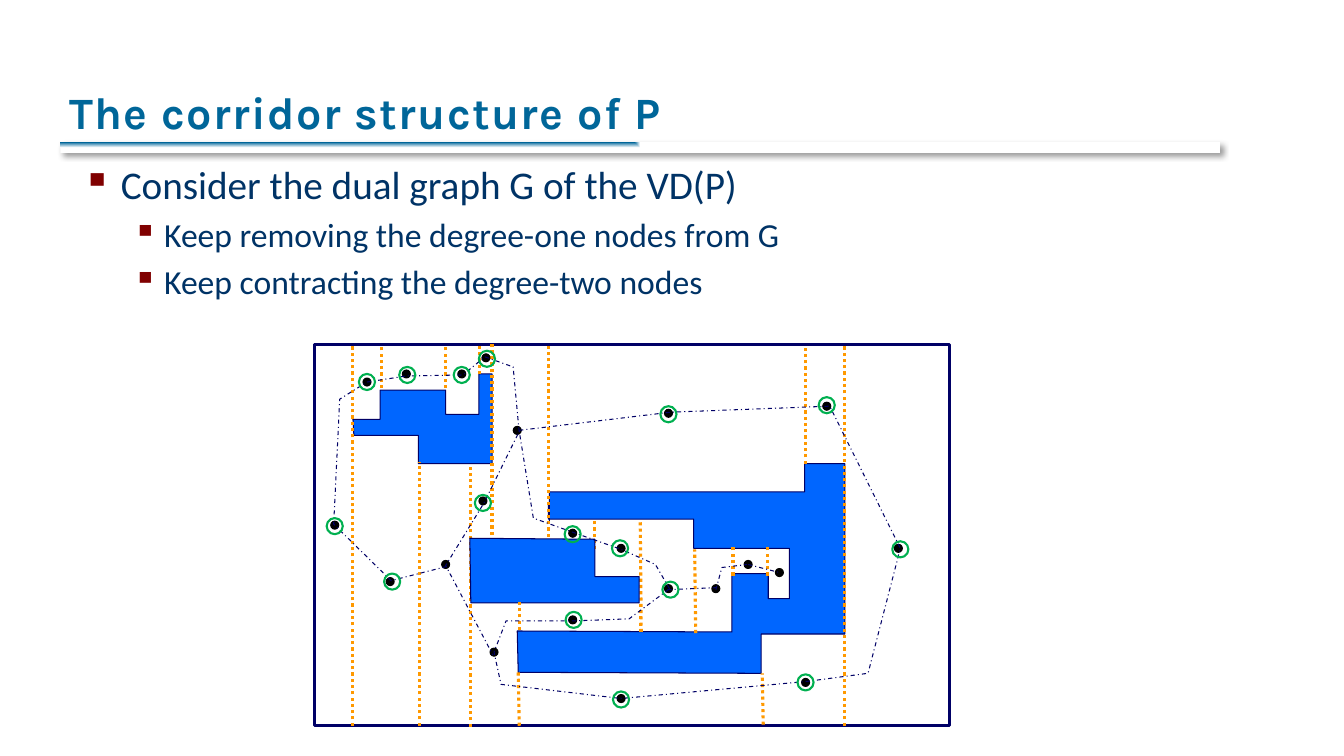
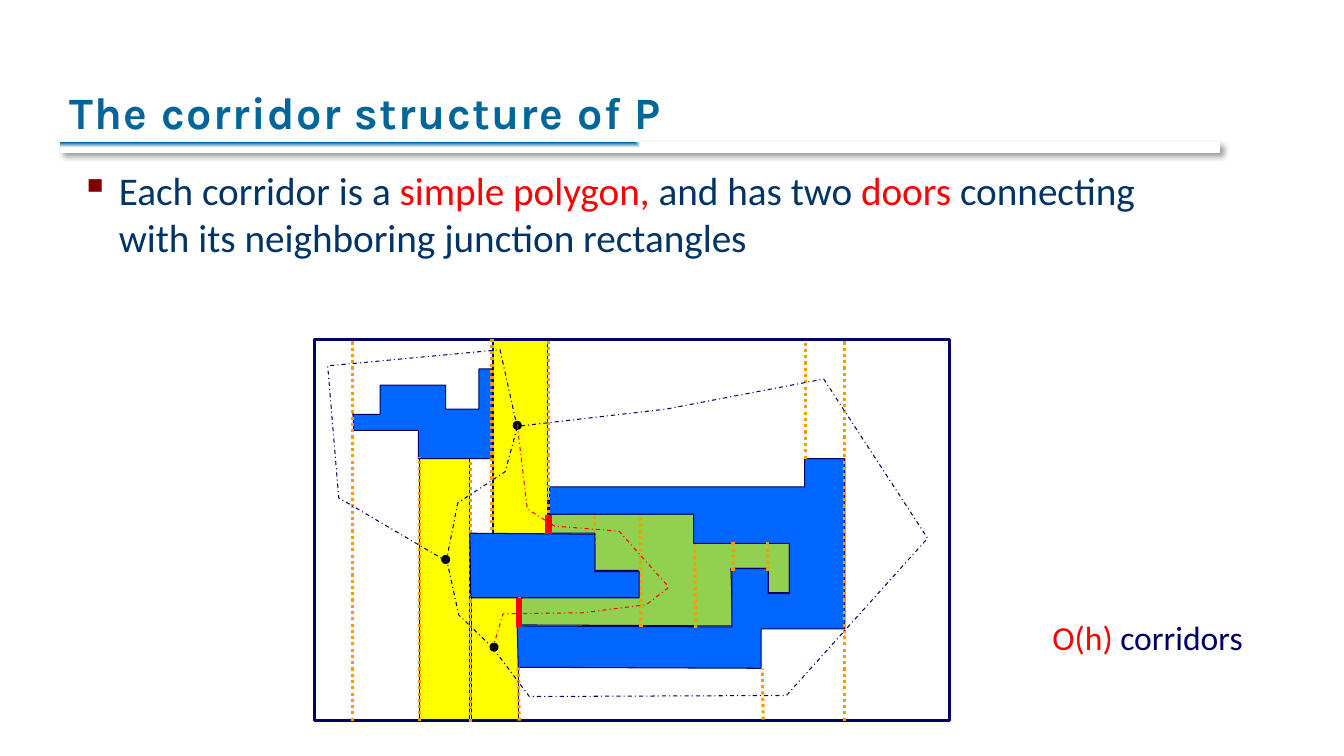
"""Build two slides on the corridor structure of a polygonal domain."""
from lxml import etree
from pptx import Presentation
from pptx import util as u
from pptx.dml.color import RGBColor
from pptx.enum import dml, shapes, text
from pptx.oxml import parse_xml
from pptx.oxml.ns import qn

TEAL = RGBColor(0x00, 0x66, 0x99)
SLATE = RGBColor(0x00, 0x33, 0x66)
NAVY = RGBColor(0x00, 0x00, 0x66)
BLUE = RGBColor(0x00, 0x66, 0xFF)
ORANGE = RGBColor(0xFF, 0x99, 0x00)
GREEN = RGBColor(0x00, 0xB0, 0x50)
LIME = RGBColor(0x92, 0xD0, 0x50)
YELLOW = RGBColor(0xFF, 0xFF, 0x00)
RED = RGBColor(0xFF, 0x00, 0x00)
BLACK = RGBColor(0x00, 0x00, 0x00)
MAROON = RGBColor(0x80, 0x00, 0x00)

DOTTED = dml.MSO_LINE.ROUND_DOT
DASHED = dml.MSO_LINE.DASH_DOT
NS = 'xmlns:a="http://schemas.openxmlformats.org/drawingml/2006/main"'
BAR_FILL = f"""<a:gradFill {NS} rotWithShape="1"><a:gsLst>
<a:gs pos="0"><a:srgbClr val="{TEAL}"/></a:gs><a:gs pos="100000"><a:srgbClr val="FFFFFF"/></a:gs>
</a:gsLst><a:path path="rect"><a:fillToRect r="100000" b="100000"/></a:path></a:gradFill>"""
BAR_SHADOW = f"""<a:effectLst {NS}><a:outerShdw blurRad="50800" dist="38100" dir="2700000" algn="tl">
<a:srgbClr val="{BLACK}"><a:alpha val="40000"/></a:srgbClr></a:outerShdw></a:effectLst>"""

LOOKS = {
    "frame": (None, NAVY, 2.25, None),
    "obstacle": (BLUE, NAVY, 0.75, None),
    "corridor": (LIME, NAVY, 0.75, None),
    "junction": (YELLOW, NAVY, 0.75, None),
    "wall": (None, ORANGE, 2.25, DOTTED),
    "door": (None, RED, 4.5, None),
    "node": (BLACK, BLACK, 0.75, None),
    "ring": (None, GREEN, 1.5, None),
    "edge": (None, NAVY, 0.75, DASHED),
    "corridor edge": (None, RED, 0.75, DASHED),
}

TEXT_STYLES = {
    "title": {"size": u.Pt(32), "name": "Karla", "bold": True},
    0: {"size": u.Pt(28), "name": "Calibri"},
    1: {"size": u.Pt(24), "name": "Calibri"},
    "label": {"size": u.Pt(24), "name": "Calibri"},
}
INDENTS = {0: (0.38, -0.38), 1: (0.81, -0.31)}

FRAME = (3.12, 3.42, 6.3, 3.78)
UPPER_LEFT = [(3.5, 4.15), (3.51, 4.32), (4.15, 4.32), (4.15, 4.6), (4.88, 4.6), (4.88, 3.71),
              (4.75, 3.71), (4.75, 4.11), (4.42, 4.11), (4.42, 3.87), (3.77, 3.87), (3.77, 4.16),
              (3.5, 4.16)]
RIGHT = [(5.44, 4.99), (5.44, 5.15), (6.88, 5.15), (6.88, 5.44), (7.83, 5.44), (7.83, 5.94),
         (7.62, 5.94), (7.62, 5.69), (7.26, 5.69), (7.26, 6.27), (5.13, 6.26), (5.14, 6.67),
         (7.55, 6.68), (7.55, 6.29), (8.38, 6.29), (8.38, 4.6), (7.98, 4.6), (7.98, 4.88),
         (5.45, 4.88), (5.45, 5.17)]
MIDDLE = [(4.66, 5.34), (5.9, 5.35), (5.9, 5.72), (6.34, 5.72), (6.34, 5.98), (4.67, 5.98)]

WALLS = [
    [(5.44, 5.45), (5.44, 3.42)], [(4.88, 5.43), (4.88, 3.41)], [(8.38, 7.2), (8.38, 3.41)],
    [(3.5, 7.2), (3.5, 3.41)], [(4.67, 7.21), (4.67, 4.6)], [(4.16, 7.2), (4.16, 4.58)],
    [(5.15, 7.2), (5.14, 6.67)], [(7.57, 7.19), (7.56, 6.68)], [(6.36, 6.27), (6.35, 5.17)],
    [(6.9, 6.28), (6.89, 5.45)], [(5.9, 5.45), (5.9, 5.17)], [(7.27, 5.71), (7.27, 5.43)],
    [(7.61, 5.71), (7.61, 5.43)], [(7.99, 4.6), (7.99, 3.42)],
]
DEAD_END_WALLS = [[(4.42, 3.85), (4.42, 3.44)], [(3.78, 3.85), (3.78, 3.44)],
                  [(4.76, 3.71), (4.76, 3.42)]]
SHORT_WALLS = [[(5.15, 6.25), (5.15, 5.96)], [(6.35, 6.27), (6.35, 5.98)]]

JUNCTION_NODES = [(4.86, 6.43), (4.38, 5.56), (5.09, 4.23)]
DEGREE_ONE_NODES = [(7.06, 5.8), (7.38, 5.56), (7.69, 5.64)]
DEGREE_TWO_NODES = [(7.95, 6.73), (8.87, 5.4), (8.16, 3.99), (6.12, 6.89), (5.64, 6.11),
                    (6.59, 5.8), (6.12, 5.4), (5.64, 5.25), (4.75, 4.93), (3.83, 5.73),
                    (3.28, 5.17), (3.6, 3.75), (3.99, 3.67), (4.54, 3.67), (4.78, 3.51),
                    (6.59, 4.06)]
RINGS = [(7.91, 6.69), (8.85, 5.37), (8.12, 3.94), (6.08, 6.86), (5.61, 6.07), (6.57, 5.77),
         (6.07, 5.36), (5.6, 5.22), (4.71, 4.91), (3.81, 5.69), (3.24, 5.14), (3.56, 3.71),
         (3.96, 3.64), (4.5, 3.64), (4.75, 3.48), (6.55, 4.03)]

DUAL_EDGES = [
    [(5.15, 4.27), (6.65, 4.09), (8.23, 4.03), (8.93, 5.44), (8.61, 6.68), (8.01, 6.76),
     (6.16, 6.93), (4.97, 6.79), (4.9, 6.47), (5.02, 6.16), (5.7, 6.16), (6.24, 6.14), (6.63, 5.85)],
    [(6.64, 5.84), (6.5, 5.6), (6.16, 5.45), (5.68, 5.28), (5.29, 5.14), (5.15, 4.28),
     (4.8, 4.99), (4.42, 5.61), (4.89, 6.5)],
    [(4.43, 5.62), (3.88, 5.76), (3.31, 5.2), (3.37, 3.96), (3.64, 3.79), (4.03, 3.73),
     (4.59, 3.72), (4.81, 3.54), (5.09, 3.64), (5.15, 4.29)],
    [(6.62, 5.85), (7.11, 5.83)],
    [(7.1, 5.85), (7.16, 5.63), (7.41, 5.6)],
    [(7.42, 5.6), (7.73, 5.68)],
]
CONTRACTED_EDGES = [
    [(4.89, 6.43), (5.25, 6.91), (7.8, 6.9), (9.2, 5.34), (8.17, 3.76), (6.6, 4.06), (5.13, 4.23)],
    [(4.89, 6.43), (4.55, 6.1), (4.43, 5.55), (4.54, 4.99), (5.01, 4.68), (5.13, 4.24),
     (4.96, 3.47), (3.25, 3.63), (3.36, 4.94), (4.45, 5.58)],
]
CORRIDOR_EDGES = [
    [(5.13, 4.21), (5.23, 5.05), (5.5, 5.22), (6.14, 5.27), (6.62, 5.81)],
    [(6.63, 5.83), (6.41, 6), (5.78, 6.08), (4.99, 6.09), (4.9, 6.39)],
]
DOORS = [[(5.44, 5.11), (5.44, 5.3)], [(5.15, 5.93), (5.15, 6.22)]]
CORRIDOR = [(5.13, 6.2), (7.27, 6.21), (7.25, 5.64), (7.62, 5.64), (7.62, 5.88), (7.83, 5.88),
            (7.83, 5.38), (6.89, 5.38), (6.89, 5.1), (5.44, 5.1), (5.44, 5.29), (5.9, 5.29),
            (5.9, 5.66), (6.33, 5.66), (6.33, 5.91), (5.14, 5.91)]
JUNCTIONS = [(4.68, 5.93, 0.46, 1.21), (4.89, 3.36, 0.54, 1.93), (4.16, 4.55, 0.5, 2.59)]

TITLE = ((0.59, 0.17, 11.33, 1.25), [("title", [("The corridor structure of P", TEAL)])])
SLIDES = [
    {
        "rise": 0,
        "texts": [((0.72, 1.54, 8.91, 1.28), [
            (0, [("Consider the dual graph G of the VD(P)", SLATE)]),
            (1, [("Keep removing the degree-one nodes from G", SLATE)]),
            (1, [("Keep contracting the degree-two nodes", SLATE)])])],
        "behind": [],
        "walls": WALLS + DEAD_END_WALLS,
        "nodes": JUNCTION_NODES + DEGREE_ONE_NODES + DEGREE_TWO_NODES,
        "front": [("path", "edge", route) for route in DUAL_EDGES]
        + [("oval", "ring", (x, y, 0.16, 0.16)) for x, y in RINGS],
    },
    {
        "rise": 0.05,
        "texts": [
            ((0.7, 1.6, 11.39, 1.15), [
                (0, [("Each corridor is a ", SLATE), ("simple polygon, ", RED),
                     ("and has two ", SLATE), ("doors", RED),
                     (" connecting with its neighboring junction rectangles", SLATE)])]),
            ((10.34, 6.07, 2.25, 0.91), [("label", [("O(h) ", RED), ("corridors", NAVY)])])],
        "behind": [("path", "corridor", CORRIDOR)]
        + [("rect", "junction", box) for box in JUNCTIONS],
        "walls": WALLS,
        "nodes": JUNCTION_NODES,
        "front": [("path", "edge", route) for route in CONTRACTED_EDGES]
        + [("path", "corridor edge", route) for route in CORRIDOR_EDGES]
        + [("line", "door", ends) for ends in DOORS],
    },
]


def draw(slide, kind, look, geometry, rise=0):
    """Draw one part of the figure, moved up by rise."""
    fill, colour, width, dash = LOOKS[look]
    if kind in ("path", "line"):
        points = [(u.Inches(x), u.Inches(y - rise)) for x, y in geometry]
    if kind == "path":
        outline = slide.shapes.build_freeform(*points[0])
        outline.add_line_segments(points[1:], close=fill is not None)
        part = outline.convert_to_shape()
    elif kind == "line":
        part = slide.shapes.add_connector(shapes.MSO_CONNECTOR.STRAIGHT, *points[0], *points[1])
        etree.SubElement(part._element.spPr, qn("a:effectLst"))
    else:
        preset = shapes.MSO_SHAPE.OVAL if kind == "oval" else shapes.MSO_SHAPE.RECTANGLE
        left, top, wide, high = geometry
        part = slide.shapes.add_shape(preset, *map(u.Inches, (left, top - rise, wide, high)))
    if kind != "line":
        part.shadow.inherit = False
        if fill is None:
            part.fill.background()
        else:
            part.fill.solid()
            part.fill.fore_color.rgb = fill
    part.line.color.rgb = colour
    part.line.width = u.Pt(width)
    if dash:
        part.line.dash_style = dash


def write(slide, box, paragraphs):
    """Add a text box whose paragraphs are pairs of style and coloured runs."""
    frame = slide.shapes.add_textbox(*map(u.Inches, box)).text_frame
    first_style = paragraphs[0][0]
    frame.word_wrap = first_style != "label"
    if first_style == "title":
        frame.vertical_anchor = text.MSO_ANCHOR.BOTTOM
    for index, (style, runs) in enumerate(paragraphs):
        paragraph = frame.add_paragraph() if index else frame.paragraphs[0]
        if style in INDENTS:
            paragraph.level = style
            paragraph.space_before = u.Pt(0.2 * TEXT_STYLES[style]["size"].pt)
            margin, indent = INDENTS[style]
            props = paragraph._p.get_or_add_pPr()
            props.set("marL", str(u.Inches(margin)))
            props.set("indent", str(u.Inches(indent)))
            bullet_colour = etree.SubElement(props, qn("a:buClr"))
            etree.SubElement(bullet_colour, qn("a:srgbClr"), val=str(MAROON))
            etree.SubElement(props, qn("a:buChar"), char="▪")
        for words, colour in runs:
            run = paragraph.add_run()
            run.text = words
            for name, value in TEXT_STYLES[style].items():
                setattr(run.font, name, value)
            run.font.color.rgb = colour
            if style == "title":
                run._r.get_or_add_rPr().set("spc", "100")


deck = Presentation()
deck.slide_width = u.Inches(13.33)
deck.slide_height = u.Inches(7.5)

for content in SLIDES:
    slide = deck.slides.add_slide(deck.slide_layouts[6])
    rise = content["rise"]

    bar = slide.shapes.add_shape(shapes.MSO_SHAPE.RECTANGLE, *map(u.Inches, (0.6, 1.41, 11.5, 0.11)))
    bar.line.fill.background()
    bar_props = bar._element.spPr
    bar_props.insert(2, parse_xml(BAR_FILL))
    bar_props.append(parse_xml(BAR_SHADOW))

    for kind, look, geometry in content["behind"]:
        draw(slide, kind, look, geometry)
    for box, paragraphs in [TITLE] + content["texts"]:
        write(slide, box, paragraphs)

    draw(slide, "rect", "frame", FRAME, rise)
    for obstacle in (UPPER_LEFT, RIGHT):
        draw(slide, "path", "obstacle", obstacle, rise)
    for wall in content["walls"]:
        draw(slide, "line", "wall", wall, rise)
    draw(slide, "path", "obstacle", MIDDLE, rise)
    for wall in SHORT_WALLS:
        draw(slide, "line", "wall", wall, rise)
    for x, y in content["nodes"]:
        draw(slide, "oval", "node", (x, y, 0.08, 0.08), rise)
    for kind, look, geometry in content["front"]:
        draw(slide, kind, look, geometry)

deck.save("out.pptx")
